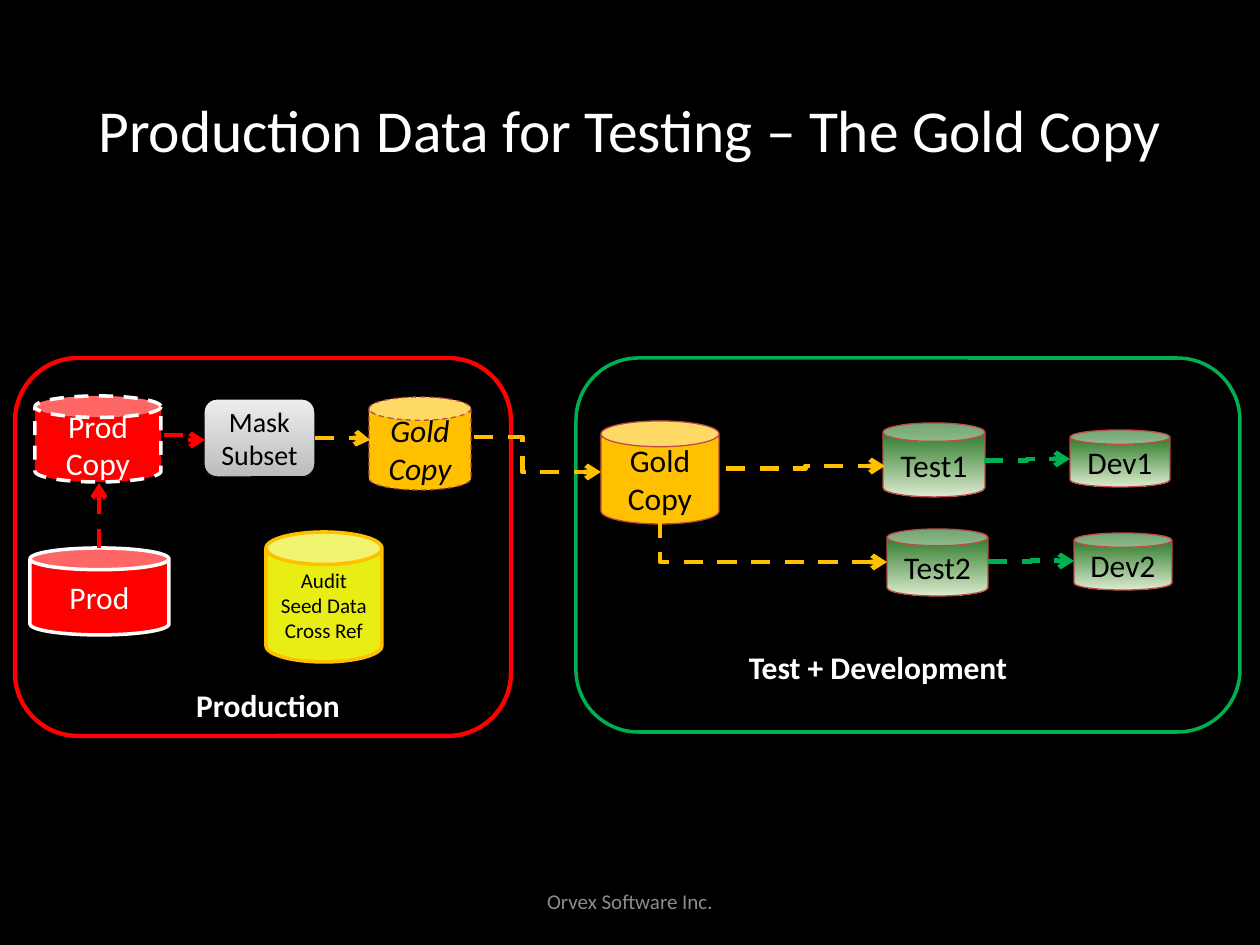
import pptx
import pptx.util
import pptx.dml.color
import pptx.enum.dml
import pptx.enum.shapes
import pptx.enum.text
import pptx.oxml
import pptx.oxml.ns

PX = 914400 / 126  # EMU per px
COLORS = {
    "black": "000000", "white": "FFFFFF", "red": "FF0000", "gold": "FFC000",
    "green": "00B050", "yellow": "E8ED13", "rust": "BE4B48", "gray": "8C8C8C",
    "leaf": "156B13", "mint": "DDEBCF", "silver": "EDEDED", "steel": "BCBCBC",
}
CAN = pptx.enum.shapes.MSO_SHAPE.CAN
ROUNDED = pptx.enum.shapes.MSO_SHAPE.ROUNDED_RECTANGLE
ELBOW = pptx.enum.shapes.MSO_CONNECTOR.ELBOW
STRAIGHT = pptx.enum.shapes.MSO_CONNECTOR.STRAIGHT
DASH = pptx.enum.dml.MSO_LINE.DASH
CENTER = pptx.enum.text.PP_ALIGN.CENTER
MIDDLE = pptx.enum.text.MSO_ANCHOR.MIDDLE
NO_FIT = pptx.enum.text.MSO_AUTO_SIZE.NONE

TEST_LOOK = dict(fill=("leaf", "mint"), line="rust")


def emu(*lengths):
    return [round(length * PX) for length in lengths]


def rgb(name):
    return pptx.dml.color.RGBColor.from_string(COLORS[name])


def write(holder, text, size, color, **font_values):
    frame = holder.text_frame
    for name, value in dict(word_wrap=True, auto_size=NO_FIT, vertical_anchor=MIDDLE).items():
        setattr(frame, name, value)
    frame.text = text
    values = dict(name="Calibri", size=pptx.util.Pt(size), **font_values)
    for paragraph in frame.paragraphs:
        paragraph.alignment = CENTER
        font = paragraph.runs[0].font
        font.color.rgb = rgb(color)
        for name, value in values.items():
            setattr(font, name, value)


def add_label(slide, box, text, size, color, **font_values):
    label = slide.shapes.add_textbox(*emu(*box))
    write(label, text, size, color, **font_values)


def add_block(slide, kind, box, fill=None, line="rust", weight=0.75, dash=None, curve=None):
    """Draw one outlined shape; a pair of fill colours gives a downward gradient."""
    block = slide.shapes.add_shape(kind, *emu(*box))
    block.shadow.inherit = False
    if fill is None:
        block.fill.background()
    elif isinstance(fill, tuple):
        block.fill.gradient()
        block.fill.gradient_angle = 270
        for stop, color, position in zip(block.fill.gradient_stops, fill, (0, 1)):
            stop.color.rgb = rgb(color)
            stop.position = position
    else:
        block.fill.solid()
        block.fill.fore_color.rgb = rgb(fill)
    block.line.color.rgb = rgb(line)
    block.line.width = pptx.util.Pt(weight)
    if dash:
        block.line.dash_style = dash
    if curve:
        block.adjustments[0] = curve
    return block


def add_flow(slide, origin, start, end, color, kind=ELBOW, bend=None, corner=False):
    """Draw a dashed arrow; corner makes it go down first, then right."""
    left, top = origin
    flow = slide.shapes.add_connector(
        kind, *emu(left + start[0], top + start[1], left + end[0], top + end[1]))
    flow.line.color.rgb = rgb(color)
    flow.line.width = pptx.util.Pt(2.75)
    flow.line.dash_style = DASH
    properties = flow._element.spPr
    geometry = properties.find(pptx.oxml.ns.qn("a:prstGeom"))
    if bend:
        guides = geometry.get_or_add_avLst()
        guide = pptx.oxml.parse_xml(
            f'<a:gd {pptx.oxml.ns.nsdecls("a")} name="adj1" fmla="val {round(bend * 100000)}"/>')
        guides.append(guide)
    if corner:  # turned half round, so the path begins at the arrowhead
        geometry.set("prst", "bentConnector2")
        properties.find(pptx.oxml.ns.qn("a:xfrm")).set("rot", "10800000")
    tag = "headEnd" if corner else "tailEnd"
    namespace = pptx.oxml.ns.nsdecls("a")
    flow.line._get_or_add_ln().append(pptx.oxml.parse_xml(f'<a:{tag} {namespace} type="arrow"/>'))
    properties.append(pptx.oxml.parse_xml(f"<a:effectLst {namespace}/>"))


def add_region(slide, box, frame_look, stores, flows, label_box, label):
    left, top = box[:2]
    add_block(slide, ROUNDED, box, **frame_look)
    for kind, (x, y, width, height), look, text_values in stores:
        store = add_block(slide, kind, (left + x, top + y, width, height), **look)
        write(store, **text_values)
    for start, end, color, options in flows:
        add_flow(slide, (left, top), start, end, color, **options)
    x, y, width, height = label_box
    add_label(slide, (left + x, top + y, width, height), label, 18, "white", bold=True)


def add_production(slide, box):
    stores = [
        (CAN, (20, 38, 126, 86), dict(fill="red", line="white", weight=2, dash=DASH),
         dict(text="Prod Copy", size=18, color="white")),
        (CAN, (251, 174, 116, 130), dict(fill="yellow", line="gold", weight=2, curve=0.28),
         dict(text="Audit\nSeed Data\nCross Ref", size=12, color="black")),
        (ROUNDED, (189, 41, 111, 78), dict(fill=("silver", "steel"), line="black"),
         dict(text="Mask\nSubset", size=16, color="black")),
        (CAN, (15, 190, 139, 87), dict(fill="red", line="white", weight=2),
         dict(text="Prod", size=18, color="white")),
        (CAN, (354, 39, 102, 93), dict(fill="gold", dash=DASH),
         dict(text="Gold Copy", size=18, color="black", italic=True)),
    ]
    flows = [
        ((84, 190), (84, 125), "red", dict(kind=STRAIGHT)),
        ((149, 77), (190, 82), "red", {}),
        ((300, 80), (355, 82), "gold", dict(bend=0.79)),
    ]
    add_region(slide, box, dict(line="red", weight=2.5), stores, flows,
               (108, 325, 290, 43), "Production")


def add_test_development(slide, box):
    gold_look = dict(fill="gold")
    stores = [
        (CAN, store_box, look, dict(text=text, size=18, color="black"))
        for text, store_box, look in [
            ("Gold Copy", (25, 63, 118, 103), gold_look),
            ("Test1", (307, 65, 102, 74), TEST_LOOK),
            ("Dev1", (494, 72, 100, 57), TEST_LOOK),
            ("Test2", (311, 171, 101, 67), TEST_LOOK),
            ("Dev2", (498, 175, 98, 57), TEST_LOOK),
        ]
    ]
    flows = [
        ((150, 111), (309, 108), "gold", {}),
        ((84, 165), (311, 204), "gold", dict(corner=True)),
        ((408, 103), (494, 101), "green", {}),
        ((412, 204), (498, 203), "green", {}),
    ]
    add_region(slide, box, dict(line="green", weight=2), stores, flows,
               (89, 290, 426, 38), "Test + Development")


def add_title(slide, box):
    title = slide.shapes.title
    for name, value in zip(("left", "top", "width", "height"), emu(*box)):
        setattr(title, name, value)
    write(title, "Production Data for Testing – The Gold Copy", 34, "white")
    title.text_frame.paragraphs[0].line_spacing = 0.9


def main():
    deck = pptx.Presentation()
    deck.slide_width, deck.slide_height = emu(1260, 945)
    slide = deck.slides.add_slide(deck.slide_layouts[5])  # Title Only
    slide.background.fill.solid()
    slide.background.fill.fore_color.rgb = rgb("black")

    add_title(slide, (63, 49, 1133, 169))
    add_test_development(slide, (576, 358, 664, 374))
    add_production(slide, (15, 358, 496, 378))
    # Gold copy handed over from production to test
    add_flow(slide, (0, 0), (474, 437), (601, 472), "gold", bend=0.38)
    # Footer
    add_label(slide, (417, 876, 426, 50), "Orvex Software Inc.", 12, "gray")
    deck.save("out.pptx")


if __name__ == "__main__":
    main()
